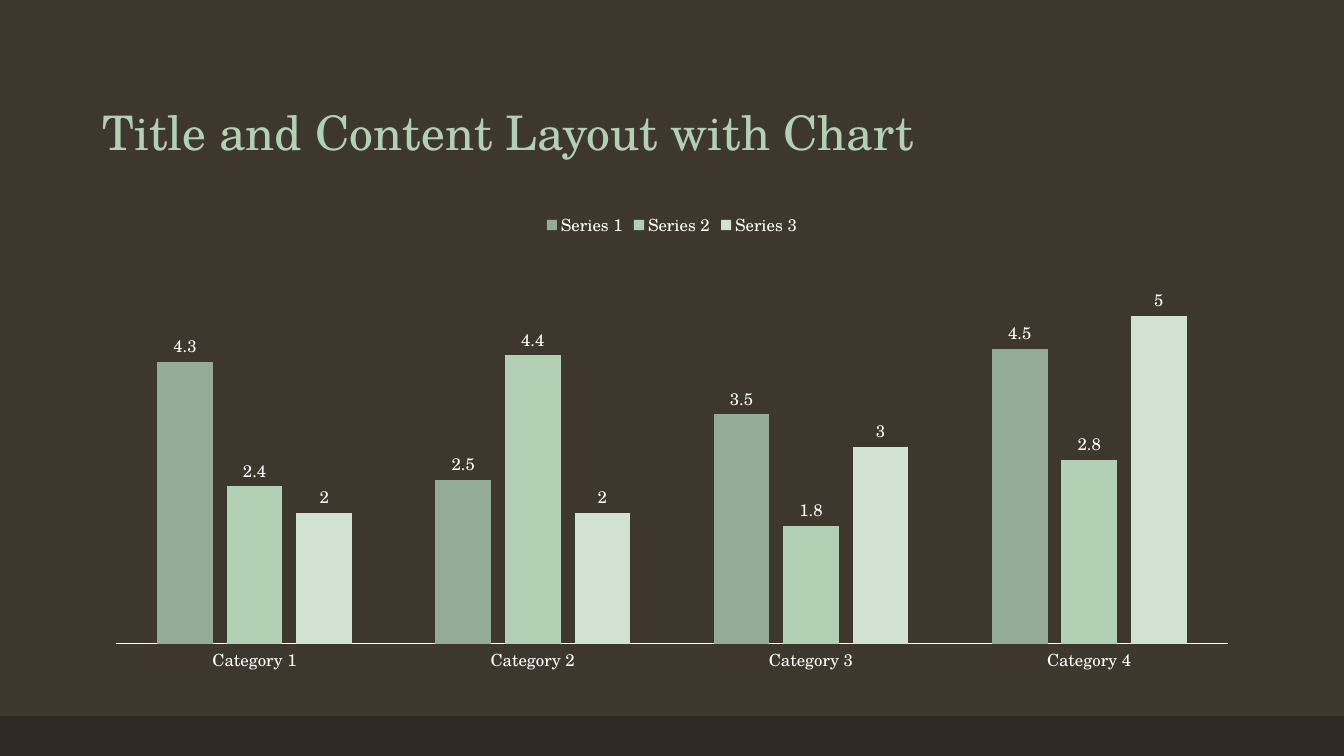
from pptx import Presentation
from pptx.chart.data import CategoryChartData
from pptx.dml.color import RGBColor
from pptx.enum.chart import XL_CHART_TYPE as ChartType
from pptx.enum.chart import XL_LABEL_POSITION as LabelPosition
from pptx.enum.chart import XL_LEGEND_POSITION as LegendPosition
from pptx.enum.chart import XL_TICK_MARK as TickMark
from pptx.enum.shapes import MSO_SHAPE as Shape
from pptx.enum.text import MSO_ANCHOR as Anchor
from pptx.enum.text import MSO_AUTO_SIZE as AutoSize
from pptx.enum.text import PP_ALIGN as Align
from pptx.util import Pt

EMU_PER_PX = 9525
SLIDE_WIDTH, SLIDE_HEIGHT = 1280, 720
MARGIN, CONTENT_WIDTH = 88, 1104
FOOTER_HEIGHT = 38
FONT = "TeX Gyre Schola"
COLORS = {
    "background": "3D372E",
    "footer": "2E2923",
    "title": "B2D0B4",
    "text": "FFFFFF",
    "Series 1": "94AC95",
    "Series 2": "B2D0B4",
    "Series 3": "D1E2D2",
}
CATEGORIES = ["Category 1", "Category 2", "Category 3", "Category 4"]
SERIES = {
    "Series 1": [4.3, 2.5, 3.5, 4.5],
    "Series 2": [2.4, 4.4, 1.8, 2.8],
    "Series 3": [2, 2, 3, 5],
}


def px(length):
    return length * EMU_PER_PX


def paint(fill, color):
    fill.solid()
    fill.fore_color.rgb = RGBColor.from_string(COLORS[color])


def style_font(font, size, color="text"):
    font.name = FONT
    font.size = Pt(size)
    font.bold = False
    font.color.rgb = RGBColor.from_string(COLORS[color])


def add_footer_band(slide):
    band = slide.shapes.add_shape(
        Shape.RECTANGLE, 0, px(SLIDE_HEIGHT - FOOTER_HEIGHT), px(SLIDE_WIDTH), px(FOOTER_HEIGHT)
    )
    band.shadow.inherit = False
    paint(band.fill, "footer")
    band.line.fill.background()


def set_title(slide, text):
    title = slide.shapes.title
    title.left, title.top = px(MARGIN), px(38)
    title.width, title.height = px(CONTENT_WIDTH), px(120)
    frame = title.text_frame
    frame.word_wrap = True
    frame.auto_size = AutoSize.NONE
    frame.vertical_anchor = Anchor.BOTTOM
    paragraph = frame.paragraphs[0]
    paragraph.alignment = Align.LEFT
    paragraph.line_spacing = 0.9
    run = paragraph.add_run()
    run.text = text
    style_font(run.font, 34, "title")


def style_axes(chart):
    chart.value_axis.minimum_scale = 0
    chart.value_axis.maximum_scale = 6
    chart.value_axis.has_major_gridlines = False
    chart.value_axis.visible = False
    axis = chart.category_axis
    axis.major_tick_mark = TickMark.NONE
    axis.minor_tick_mark = TickMark.NONE
    axis.format.line.width = Pt(0.75)
    axis.format.line.color.rgb = RGBColor.from_string(COLORS["text"])
    style_font(axis.tick_labels.font, 12)


def style_series(series):
    paint(series.format.fill, series.name)
    series.invert_if_negative = False
    labels = series.data_labels
    labels.show_value = True
    labels.position = LabelPosition.OUTSIDE_END
    style_font(labels.font, 12)


def add_column_chart(slide):
    data = CategoryChartData()
    data.categories = CATEGORIES
    for name, values in SERIES.items():
        data.add_series(name, values)
    chart = slide.shapes.add_chart(
        ChartType.COLUMN_CLUSTERED, px(MARGIN), px(192), px(CONTENT_WIDTH), px(457), data
    ).chart
    style_font(chart.font, 10)
    chart.has_title = False
    chart.has_legend = True
    chart.legend.position = LegendPosition.TOP
    chart.legend.include_in_layout = False
    style_font(chart.legend.font, 12)
    style_axes(chart)
    plot = chart.plots[0]
    plot.vary_by_categories = False
    plot.gap_width = 150
    plot.overlap = -25
    for series in plot.series:
        style_series(series)


def main():
    presentation = Presentation()
    presentation.slide_width = px(SLIDE_WIDTH)
    presentation.slide_height = px(SLIDE_HEIGHT)
    slide = presentation.slides.add_slide(presentation.slide_layouts[5])
    paint(slide.background.fill, "background")
    add_footer_band(slide)
    set_title(slide, "Title and Content Layout with Chart")
    add_column_chart(slide)
    presentation.save("out.pptx")


if __name__ == "__main__":
    main()
